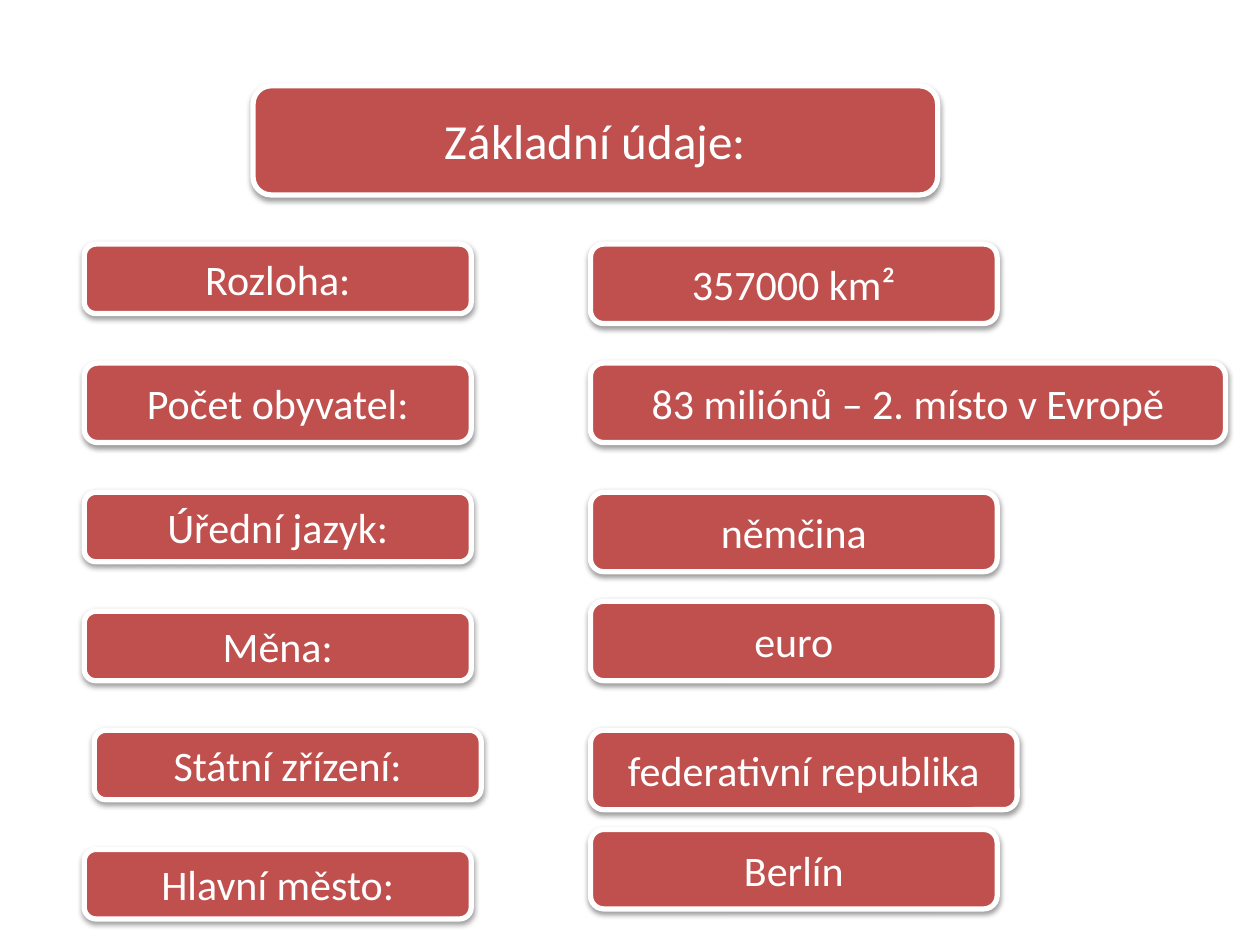
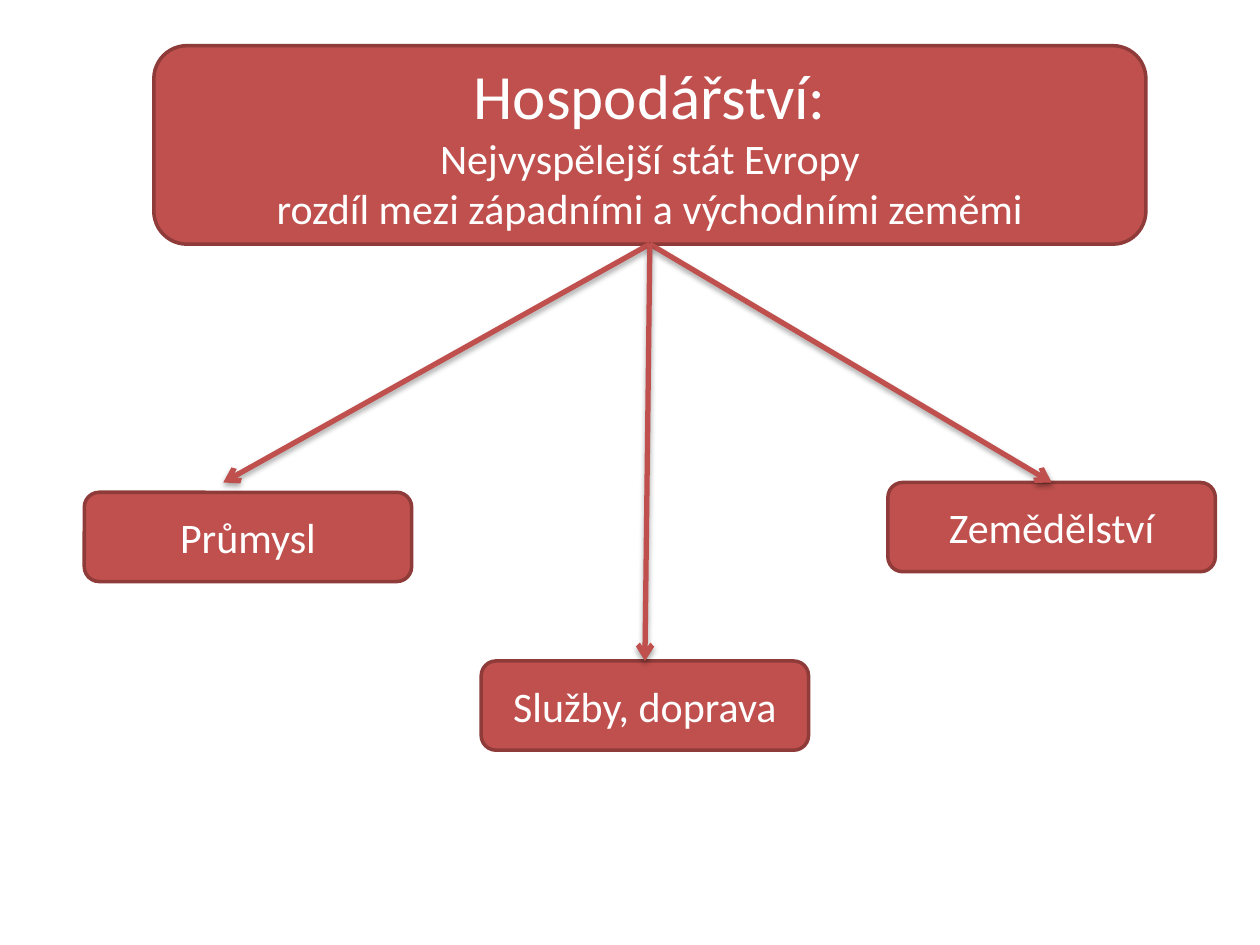
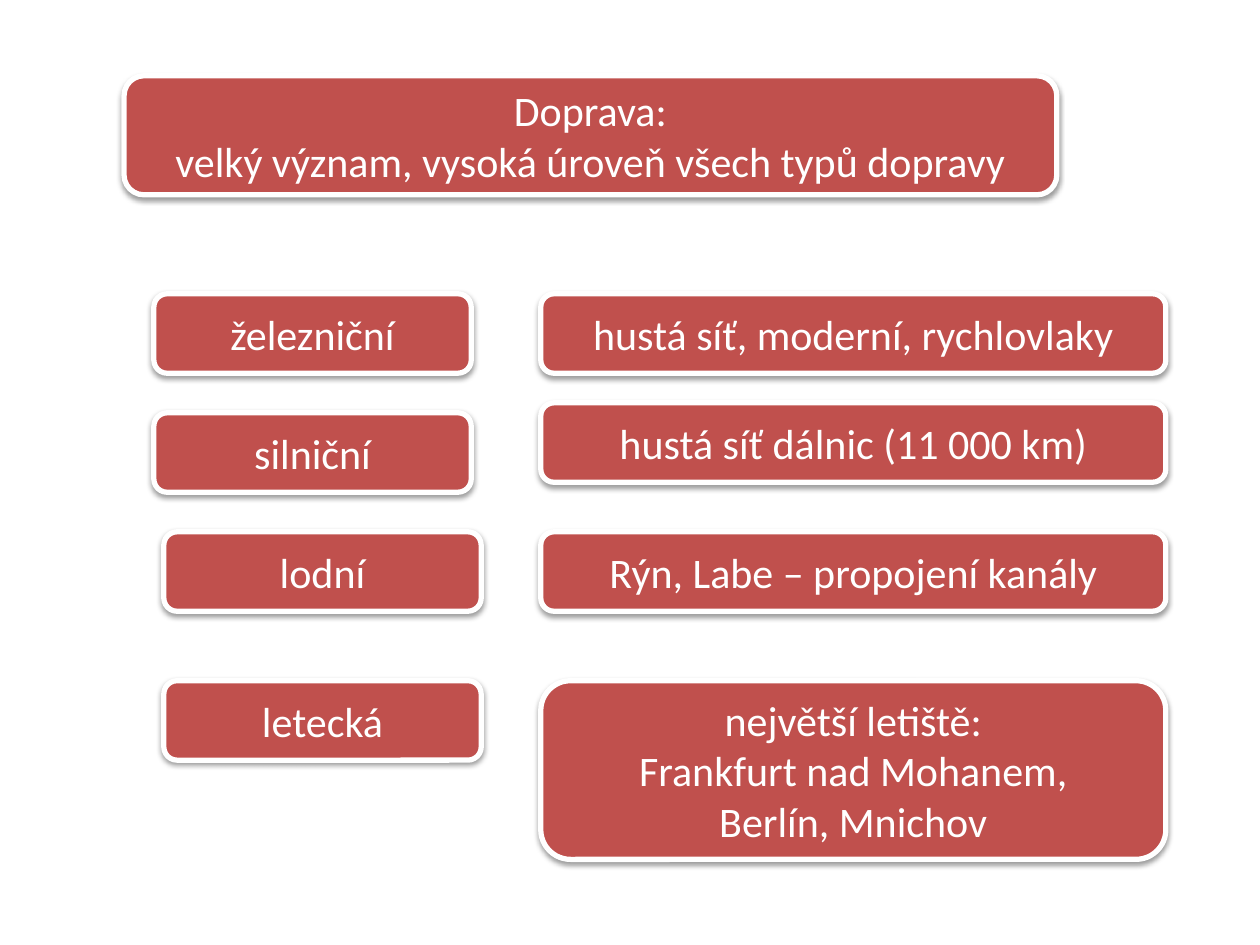
from dataclasses import dataclass

from lxml.etree import SubElement
from pptx import Presentation
from pptx.dml.color import RGBColor as Rgb
from pptx.enum.shapes import MSO_CONNECTOR as Connector, MSO_SHAPE as Preset
from pptx.enum.text import MSO_ANCHOR as Anchor, PP_ALIGN as Align
from pptx.oxml.ns import qn
from pptx.util import Pt


@dataclass(frozen=True)
class Theme:
    red: Rgb = Rgb(0xC0, 0x50, 0x4D)
    dark_red: Rgb = Rgb(0x8E, 0x3B, 0x39)
    white: Rgb = Rgb(0xFF, 0xFF, 0xFF)
    font: str = "Calibri"
    body: int = 24
    heading: int = 28
    headline: int = 36


theme = Theme()


def cast_shadow(part, alpha, distance):
    properties = part._element.spPr
    effects = properties.find(qn("a:effectLst"))
    if effects is None:
        effects = SubElement(properties, qn("a:effectLst"))
    shadow = SubElement(effects, qn("a:outerShdw"), blurRad=str(Pt(3.1)),
                        dist=str(Pt(distance)), dir="5400000", rotWithShape="0")
    color = SubElement(shadow, qn("a:srgbClr"), val="000000")
    SubElement(color, qn("a:alpha"), val=str(alpha * 1000))


def add_card(slide, text, left, top, width, height, *, first_size=theme.body,
             border=theme.white, border_width=3, raised=True):
    card = slide.shapes.add_shape(Preset.ROUNDED_RECTANGLE, Pt(left), Pt(top), Pt(width), Pt(height))
    card.fill.solid()
    card.fill.fore_color.rgb = theme.red
    card.line.color.rgb = border
    card.line.width = Pt(border_width)
    card.shadow.inherit = False
    if raised:
        cast_shadow(card, alpha=38, distance=1.6)
    frame = card.text_frame
    frame.word_wrap = True
    frame.vertical_anchor = Anchor.MIDDLE
    for index, line in enumerate(text.split("\n")):
        paragraph = frame.add_paragraph() if index else frame.paragraphs[0]
        paragraph.alignment = Align.CENTER
        run = paragraph.add_run()
        run.text = line
        run.font.name = theme.font
        run.font.size = Pt(theme.body if index else first_size)
        run.font.color.rgb = theme.white
    return card


deck = Presentation()
deck.slide_width, deck.slide_height = Pt(720), Pt(540)
blank = deck.slide_layouts[6]
low, tall = 39.7, 45.4

facts = deck.slides.add_slide(blank)
add_card(facts, "Základní údaje:", 144.6, 49, 391.2, 62.4, first_size=theme.heading)
for label, label_left, label_top, label_height, value, value_top, value_width in [
    ("Rozloha:", 48.2, 139.5, low, "357000 km²", 139.5, 232.4),
    ("Počet obyvatel:", 48.2, 207.5, tall, "83 miliónů – 2. místo v Evropě", 207.5, 362.9),
    ("Úřední jazyk:", 48.2, 281.3, low, "němčina", 281.3, 232.4),
    ("Měna:", 48.2, 349.3, low, "euro", 343.6, 232.4),
    ("Státní zřízení:", 53.9, 417.3, low, "federativní republika", 417.3, 243.8),
    ("Hlavní město:", 48.2, 485.4, low, "Berlín", 474, 232.4),
]:
    add_card(facts, label, label_left, label_top, 221.1, label_height)
    add_card(facts, value, 337.4, value_top, value_width, tall)

economy = deck.slides.add_slide(blank)
outlined = dict(border=theme.dark_red, border_width=2, raised=False)
headline = add_card(
    economy,
    "Hospodářství:\nNejvyspělejší stát Evropy\nrozdíl mezi západními a východními zeměmi",
    87.9, 26.1, 566.9, 113.4, first_size=theme.headline, **outlined)
for sector, left, top, loose_end in [
    ("Průmysl", 48.2, 281.3, (127.6, 275.7)),
    ("Zemědělství", 507.4, 275.7, None),
    ("Služby, doprava", 275, 377.7, None),
]:
    sector_card = add_card(economy, sector, left, top, 187.1, 51, **outlined)
    end_x, end_y = loose_end or (left, top)
    arrow = economy.shapes.add_connector(Connector.STRAIGHT, 0, 0, Pt(end_x), Pt(end_y))
    arrow.begin_connect(headline, 2)
    if loose_end is None:
        arrow.end_connect(sector_card, 0)
    arrow.line.color.rgb = theme.red
    arrow.line.width = Pt(3)
    SubElement(arrow.line._get_or_add_ln(), qn("a:tailEnd"), type="arrow")
    cast_shadow(arrow, alpha=35, distance=1.8)

transport = deck.slides.add_slide(blank)
add_card(transport, "Doprava:\nvelký význam, vysoká úroveň všech typů dopravy", 70.9, 43.3, 533, 68)
for mode, mode_left, mode_top, detail, detail_top, detail_height in [
    ("železniční", 87.9, 167.9, "hustá síť, moderní, rychlovlaky", 167.9, tall),
    ("silniční", 87.9, 235.9, "hustá síť dálnic (11 000 km)", 230.2, tall),
    ("lodní", 93.6, 303.9, "Rýn, Labe – propojení kanály", 303.9, tall),
    ("letecká", 93.6, 389, "největší letiště:\nFrankfurt nad Mohanem,\nBerlín, Mnichov", 389, 102.1),
]:
    add_card(transport, mode, mode_left, mode_top, 181.4, tall)
    add_card(transport, detail, 309, detail_top, 357.2, detail_height)

deck.save("out.pptx")
